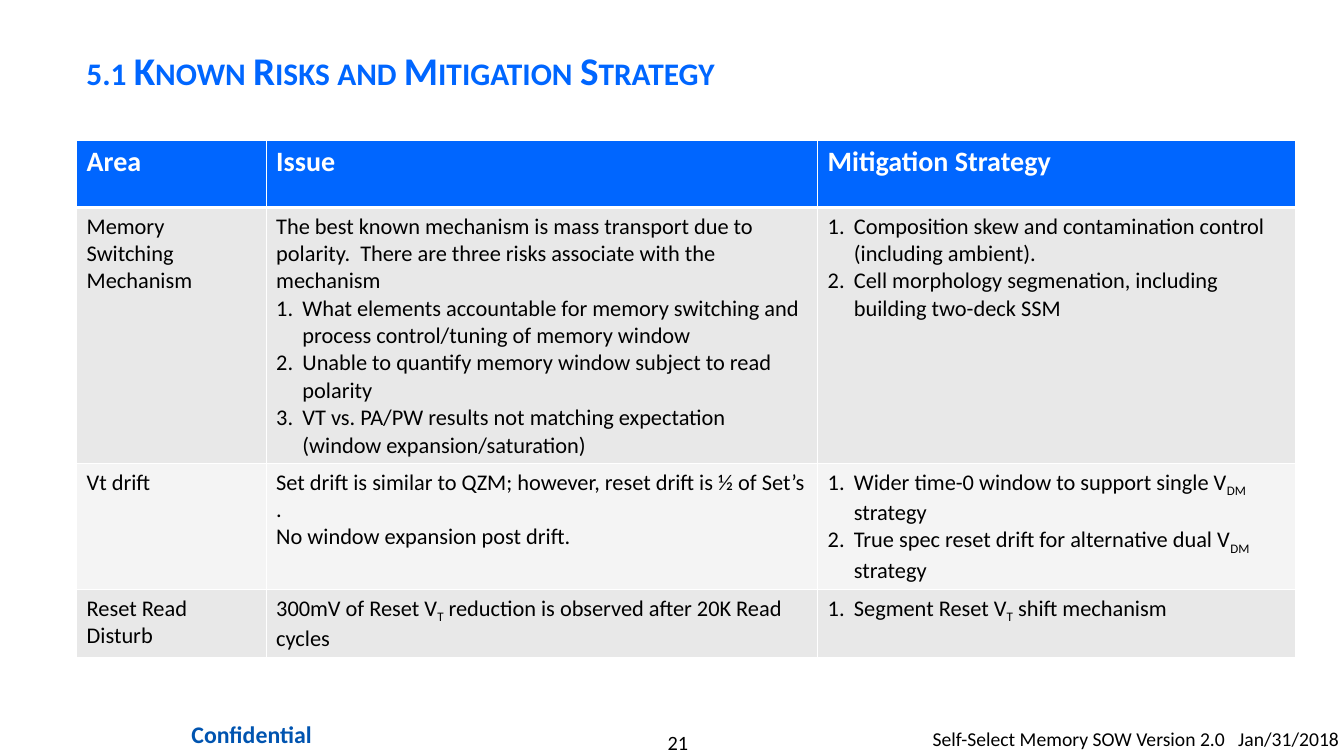
from lxml import etree
from pptx import Presentation
from pptx.dml.color import RGBColor
from pptx.enum import text
from pptx.oxml import ns
from pptx.util import Inches, Pt

BLUE, WHITE, BLACK = "0066FF", "FFFFFF", "000000"


def color(value):
    return RGBColor.from_string(value)


def style(paragraph, size, tint, bold=False):
    for run in paragraph.runs:
        run.font.name = "Calibri"
        run.font.size = Pt(size)
        run.font.bold = bold
        run.font.color.rgb = color(tint)


prs = Presentation()
prs.slide_width, prs.slide_height = Inches(13.33), Inches(7.5)
slide = prs.slides.add_slide(prs.slide_layouts[6])

# Title and footer: wording, box, insets, size, colour, bold, alignment
left, center = text.PP_ALIGN.LEFT, text.PP_ALIGN.CENTER
labels = [
    ("5.1 Known Risks and Mitigation Strategy", (0.76, 0.21, 11.06, 0.92), (0.1, 0.05), 28, BLUE, True, left),
    ("21", (5.56, 7.24, 2.33, 0.24), (0, 0), 14.5, BLACK, False, center),
    ("Confidential", (1.55, 7.08, 1.89, 0.41), (0.12, 0.06), 17, "0054B0", True, center),
    ("Self-Select Memory SOW Version 2.0   Jan/31/2018", (9.25, 7.16, 4.08, 0.34), (0, 0.05), 14, BLACK, False, left),
]
frames = []
for wording, box, (side, top), size, tint, bold, align in labels:
    frame = slide.shapes.add_textbox(*map(Inches, box)).text_frame
    frame.word_wrap = True
    frame.margin_left = frame.margin_right = Inches(side)
    frame.margin_top = frame.margin_bottom = Inches(top)
    frame.text = wording
    frame.paragraphs[0].alignment = align
    style(frame.paragraphs[0], size, tint, bold)
    frames.append(frame)

title = frames[0]
title.vertical_anchor = text.MSO_ANCHOR.MIDDLE
title.paragraphs[0].line_spacing = 1.1
title.paragraphs[0].runs[0].font._element.set("cap", "small")

# Risk table: each cell lists its paragraphs, "#" numbers one, bars enclose a subscript
risks = [
    [["Area"], ["Issue"], ["Mitigation Strategy"]],
    [
        ["Memory Switching Mechanism"],
        ["The best known mechanism is mass transport due to polarity.  There are three risks associate with the mechanism",
         "#What elements accountable for memory switching and process control/tuning of memory window",
         "#Unable to quantify memory window subject to read polarity",
         "#VT vs. PA/PW results not matching expectation (window expansion/saturation)"],
        ["#Composition skew and contamination control (including ambient).",
         "#Cell morphology segmenation, including building two-deck SSM"],
    ],
    [
        ["Vt drift"],
        ["Set drift is similar to QZM; however, reset drift is ½ of Set’s .",
         "No window expansion post drift."],
        ["#Wider time-0 window to support single V|DM| strategy",
         "#True spec reset drift for alternative dual V|DM| strategy"],
    ],
    [
        ["Reset Read Disturb"],
        ["300mV of Reset V|T| reduction is observed after 20K Read cycles"],
        ["#Segment Reset V|T| shift mechanism"],
    ],
]
widths, heights = [1.88, 5.47, 4.74], [0.67, 2.54, 1.25, 0.67]
table = slide.shapes.add_table(
    len(heights), len(widths), Inches(0.76), Inches(1.39),
    Inches(sum(widths)), Inches(sum(heights))).table
for column, width in zip(table.columns, widths):
    column.width = Inches(width)
for row, height in zip(table.rows, heights):
    row.height = Inches(height)

for r, risk in enumerate(risks):
    header = r == 0
    for c, lines in enumerate(risk):
        cell = table.cell(r, c)

        # White borders, heavier under the header
        tc_pr = cell._tc.get_or_add_tcPr()
        for edge in ("lnL", "lnR", "lnT", "lnB"):
            heavy = (r, edge) in ((0, "lnB"), (1, "lnT"))
            border = etree.SubElement(tc_pr, ns.qn(f"a:{edge}"), w=str(Pt(3 if heavy else 1)))
            fill = etree.SubElement(border, ns.qn("a:solidFill"))
            etree.SubElement(fill, ns.qn("a:srgbClr"), val=WHITE)
        cell.fill.solid()
        cell.fill.fore_color.rgb = color(BLUE if header else ("F4F4F4", "E8E8E8")[r % 2])

        # Wording
        cell.text_frame.text = "\n".join([""] * len(lines))
        for paragraph, line in zip(cell.text_frame.paragraphs, lines):
            if line.startswith("#"):
                p_pr = paragraph._p.get_or_add_pPr()
                p_pr.set("marL", str(Inches(0.26)))
                p_pr.set("indent", str(Inches(-0.26)))
                etree.SubElement(p_pr, ns.qn("a:buFont"), typeface="+mj-lt")
                etree.SubElement(p_pr, ns.qn("a:buAutoNum"), type="arabicPeriod")
            for i, piece in enumerate(line.lstrip("#").split("|")):
                run = paragraph.add_run()
                run.text = piece
                if i % 2:
                    run.font._element.set("baseline", "-25000")
            style(paragraph, 20 if header else 16, WHITE if header else BLACK, header)

prs.save("out.pptx")
